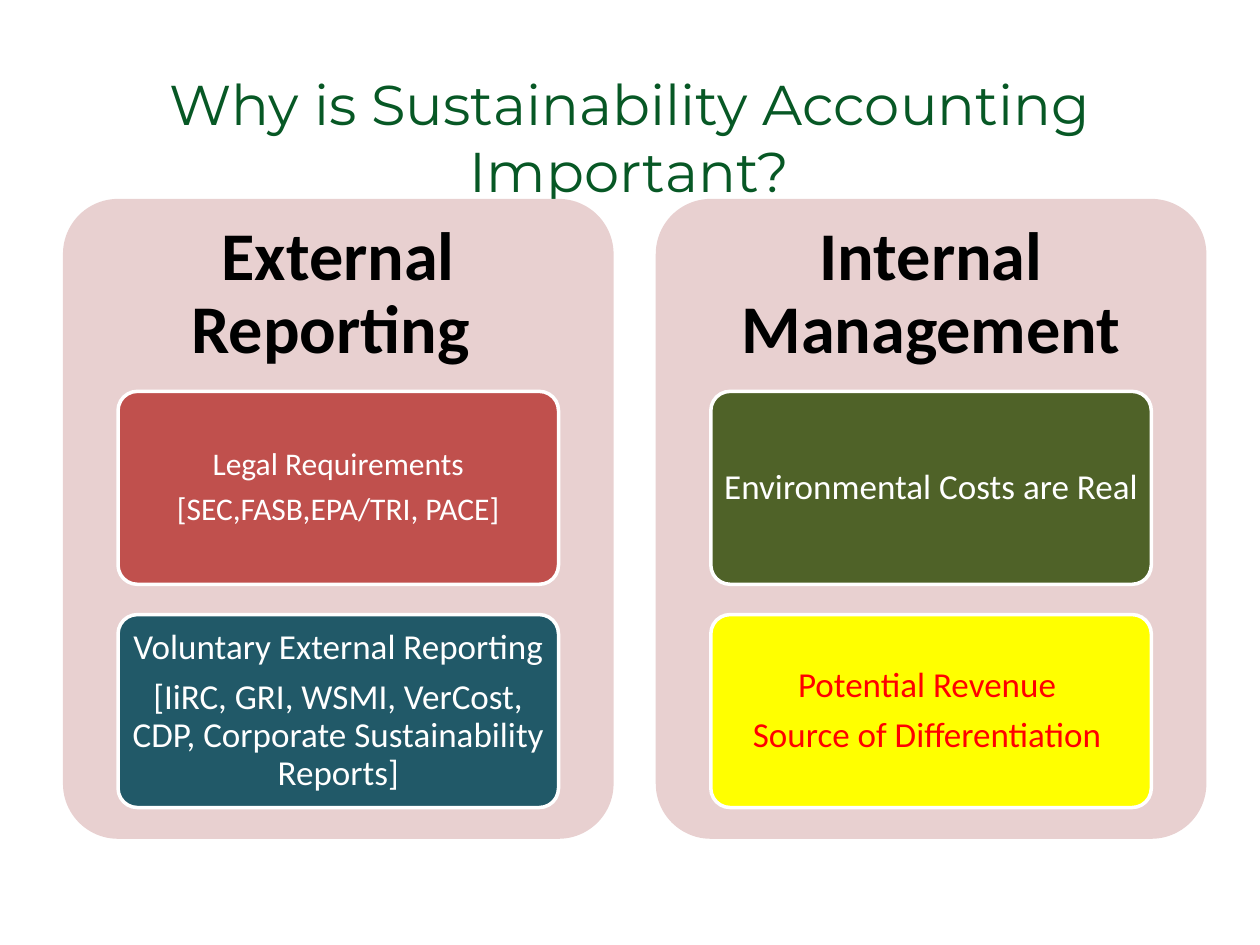
from dataclasses import dataclass

import pptx
import pptx.dml.color
import pptx.enum.shapes
import pptx.enum.text
import pptx.util

Cm = pptx.util.Cm
Pt = pptx.util.Pt

PANEL_LEFT, PANEL_TOP = 1.27, 4.01
PANEL_WIDTH, PANEL_HEIGHT = 11.1, 12.9
PANEL_STEP = 11.95
HEADING_HEIGHT = 3.87
CARD_INDENT = PANEL_WIDTH / 10
CARD_TOP, CARD_HEIGHT, CARD_STEP = 7.89, 3.89, 4.5


@dataclass
class Box:
    left: float
    top: float
    width: float
    height: float

    def lengths(self) -> tuple:
        return Cm(self.left), Cm(self.top), Cm(self.width), Cm(self.height)


@dataclass
class Style:
    size: int
    color: str = "FFFFFF"
    font: str = "Calibri"
    bold: bool = False
    line_spacing: float = 0.9
    space_after: float = 0


@dataclass
class Card:
    lines: list[str]
    fill: str
    style: Style


@dataclass
class Panel:
    heading: str
    cards: list[Card]


TITLE = Style(32, "075825", "Montserrat", line_spacing=1)
HEADING = Style(39, "000000", bold=True, space_after=13.65)
SMALL = Style(18, space_after=6.3)
LIGHT = Style(20, space_after=7)
RED = Style(20, "FF0000", space_after=7)

PANELS = [
    Panel("External Reporting ", [
        Card(["Legal Requirements", "[SEC,FASB,EPA/TRI, PACE]"], "C0504D", SMALL),
        Card(["Voluntary External Reporting ",
              "[IiRC, GRI, WSMI, VerCost, CDP, Corporate Sustainability Reports]"],
             "215968", LIGHT),
    ]),
    Panel("Internal Management", [
        Card(["Environmental Costs are Real"], "4F6228", LIGHT),
        Card(["Potential Revenue ", "Source of Differentiation "], "FFFF00", RED),
    ]),
]


def rgb(color: str) -> pptx.dml.color.RGBColor:
    return pptx.dml.color.RGBColor.from_string(color)


def set_attributes(target, values: dict) -> None:
    for name, value in values.items():
        setattr(target, name, value)


def write_text(shape, lines: list[str], style: Style, inset_x: float, inset_y: float) -> None:
    frame = shape.text_frame
    set_attributes(frame, {
        "text": "\n".join(lines),
        "word_wrap": True,
        "vertical_anchor": pptx.enum.text.MSO_ANCHOR.MIDDLE,
        "margin_left": Cm(inset_x), "margin_right": Cm(inset_x),
        "margin_top": Cm(inset_y), "margin_bottom": Cm(inset_y),
    })
    for paragraph in frame.paragraphs:
        set_attributes(paragraph, {
            "alignment": pptx.enum.text.PP_ALIGN.CENTER,
            "line_spacing": style.line_spacing,
            "space_after": Pt(style.space_after),
        })
        for run in paragraph.runs:
            set_attributes(run.font, {
                "name": style.font, "size": Pt(style.size), "bold": style.bold})
            run.font.color.rgb = rgb(style.color)


def add_rounded(slide, box: Box, fill: str):
    shape = slide.shapes.add_shape(
        pptx.enum.shapes.MSO_SHAPE.ROUNDED_RECTANGLE, *box.lengths())
    shape.adjustments[0] = 0.1
    shape.shadow.inherit = False
    shape.fill.solid()
    shape.fill.fore_color.rgb = rgb(fill)
    shape.line.fill.background()
    return shape


def add_card(slide, box: Box, card: Card) -> None:
    shape = add_rounded(slide, box, card.fill)
    shape.line.color.rgb = rgb("FFFFFF")
    shape.line.width = Pt(2)
    write_text(shape, card.lines, card.style, 0.14, 0.1)


def add_panel(slide, left: float, panel: Panel) -> None:
    add_rounded(slide, Box(left, PANEL_TOP, PANEL_WIDTH, PANEL_HEIGHT), "E8D0D0")
    heading_box = Box(left, PANEL_TOP, PANEL_WIDTH, HEADING_HEIGHT)
    heading = slide.shapes.add_textbox(*heading_box.lengths())
    write_text(heading, [panel.heading], HEADING, 0.41, 0.41)
    for row, card in enumerate(panel.cards):
        box = Box(left + CARD_INDENT, CARD_TOP + row * CARD_STEP,
                  PANEL_WIDTH - 2 * CARD_INDENT, CARD_HEIGHT)
        add_card(slide, box, card)


def main() -> None:
    presentation = pptx.Presentation()
    presentation.slide_width, presentation.slide_height = Cm(25.4), Cm(19.05)
    slide = presentation.slides.add_slide(presentation.slide_layouts[6])
    title = slide.shapes.add_textbox(*Box(1.27, 1.9, 22.86, 1.7).lengths())
    write_text(title, ["Why is Sustainability Accounting Important?"], TITLE, 0.25, 0.13)
    for column, panel in enumerate(PANELS):
        add_panel(slide, PANEL_LEFT + column * PANEL_STEP, panel)
    presentation.save("out.pptx")


if __name__ == "__main__":
    main()
